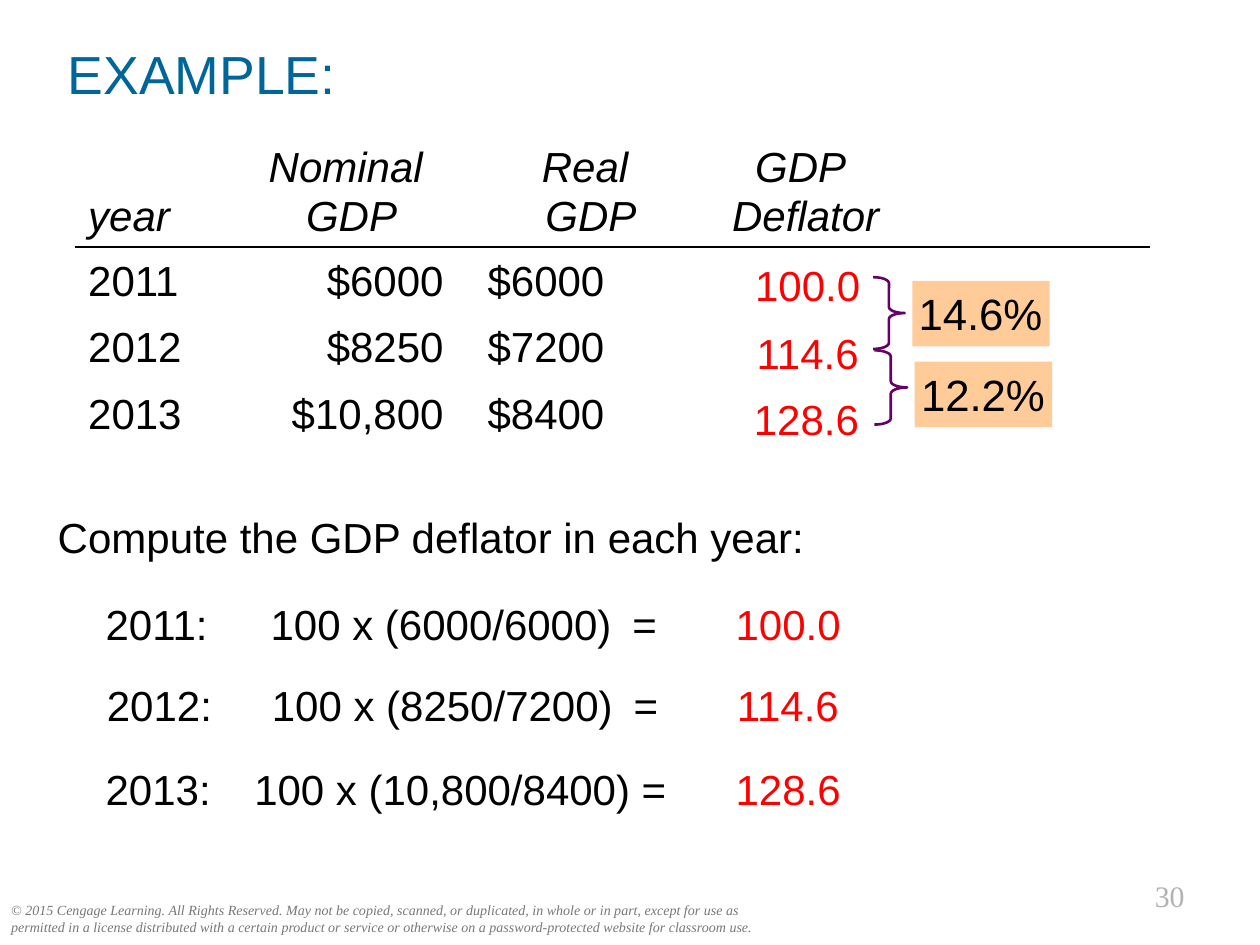
"""Build the GDP deflator example slide."""
from lxml.etree import SubElement
from pptx import Presentation
from pptx.dml.color import RGBColor
from pptx.enum.shapes import MSO_SHAPE as Shape
from pptx.enum.text import MSO_ANCHOR as Anchor, PP_ALIGN as Align
from pptx.oxml import parse_xml
from pptx.oxml.ns import nsdecls, qn
from pptx.util import Inches, Pt

COLORS = {
    "title": "006699", "text": "000000", "result": "FF0000", "growth": "FFCC99",
    "brace": "660066", "copyright": "777777", "number": "B2B2B2",
}


def style(paragraph, size=24, color="text", font="Arial", italic=False, align=Align.LEFT, spacing=1.05):
    paragraph.alignment = align
    paragraph.line_spacing = spacing
    paragraph.font.size = Pt(size)
    paragraph.font.name = font
    paragraph.font.italic = italic
    paragraph.font.color.rgb = RGBColor.from_string(COLORS[color])


def add_text(left, top, width, height, text, anchor=Anchor.TOP, tabs=(), **options):
    frame = slide.shapes.add_textbox(Inches(left), Inches(top), Inches(width), Inches(height)).text_frame
    frame.word_wrap = True
    frame.vertical_anchor = anchor
    paragraph = frame.paragraphs[0]
    paragraph.text = text
    if tabs:
        tab_list = SubElement(paragraph._p.get_or_add_pPr(), qn("a:tabLst"))
        for position in tabs:
            SubElement(tab_list, qn("a:tab"), pos=str(Inches(position)), algn="l")
    style(paragraph, **options)
    return paragraph


presentation = Presentation()
presentation.slide_width = Inches(10)
presentation.slide_height = Inches(7.5)
slide = presentation.slides.add_slide(presentation.slide_layouts[6])

add_text(
    -0.01, 7.11, 6.18, 0.37,
    "© 2015 Cengage Learning. All Rights Reserved. May not be copied, scanned, or duplicated, "
    "in whole or in part, except for use as permitted in a license distributed with a certain "
    "product or service or otherwise on a password-protected website for classroom use.",
    size=8, color="copyright", font="Times New Roman", italic=True, spacing=1,
)
add_text(8.25, 6.92, 1.25, 0.39, "30", size=17, color="number",
         font="Times New Roman", align=Align.RIGHT, spacing=1)
add_text(0.44, 0.27, 7.38, 0.62, "EXAMPLE:", anchor=Anchor.MIDDLE, size=30.6, color="title", spacing=1)
add_text(0.36, 3.99, 8.91, 0.59, "Compute the GDP deflator in each year:")

rows = [
    ["year", "Nominal \nGDP", "Real \nGDP", "GDP \nDeflator", ""],
    ["2011", "$6000", "$6000", "", ""],
    ["2012", "$8250", "$7200", "", ""],
    ["2013", "$10,800", "$8400", "", ""],
]
table = slide.shapes.add_table(4, 5, Inches(0.6), Inches(1.02), Inches(8.52), Inches(2.47)).table
table.first_row = False
table.horz_banding = False
for column, width in zip(table.columns, [1.21, 1.96, 1.84, 1.57, 1.94]):
    column.width = Inches(width)
for row_index, values in enumerate(rows):
    header = row_index == 0
    table.rows[row_index].height = Inches(0.88 if header else 0.53)
    for column_index, value in enumerate(values):
        cell = table.cell(row_index, column_index)
        cell.fill.background()
        cell.vertical_anchor = Anchor.BOTTOM if header else Anchor.MIDDLE
        align = Align.LEFT
        if header and column_index > 0:
            align = Align.CENTER
        elif column_index == 1:
            align = Align.RIGHT
            cell.margin_right = Inches(0.25)
        paragraph = cell.text_frame.paragraphs[0]
        paragraph.text = value
        style(paragraph, italic=header, align=align)
        if row_index < 2:
            edge = "lnB" if header else "lnT"
            cell._tc.get_or_add_tcPr().insert(0, parse_xml(
                f'<a:{edge} {nsdecls("a")} w="{Pt(1)}"><a:solidFill>'
                f'<a:srgbClr val="{COLORS["text"]}"/></a:solidFill></a:{edge}>'))

calculations = [
    ("2011:\t100 x (6000/6000)\t=\t", "100.0", 0.74, 4.68, (1.31, 4.18, 5), 5.8, 2.01),
    ("2012:\t100 x (8250/7200)\t=\t", "114.6", 0.75, 5.32, (1.31, 4.18, 5), 5.8, 2.55),
    ("2013:\t100 x (10,800/8400) =\t", "128.6", 0.74, 5.99, (1.18, 5), 5.79, 3.07),
]
for formula, deflator, left, top, tabs, deflator_left, deflator_top in calculations:
    result = add_text(left, top, 6.86, 0.59, formula, tabs=tabs).add_run()
    result.text = deflator
    result.font.color.rgb = RGBColor.from_string(COLORS["result"])
    add_text(deflator_left, deflator_top, 1.22, 0.48, deflator,
             anchor=Anchor.MIDDLE, color="result", align=Align.CENTER)

growth_rates = [
    ("14.6%", 7.24, 2.23, (6.93, 2.2, 0.25, 0.57)),
    ("12.2%", 7.26, 2.87, (6.94, 2.78, 0.26, 0.59)),
]
for rate, left, top, brace_box in growth_rates:
    box = slide.shapes.add_shape(Shape.RECTANGLE, Inches(left), Inches(top), Inches(1.09), Inches(0.52))
    box.shadow.inherit = False
    box.fill.solid()
    box.fill.fore_color.rgb = RGBColor.from_string(COLORS["growth"])
    box.line.fill.background()
    frame = box.text_frame
    frame.word_wrap = False
    frame.vertical_anchor = Anchor.TOP
    frame.margin_left = frame.margin_right = Inches(0.05)
    frame.paragraphs[0].text = rate
    style(frame.paragraphs[0], size=25, spacing=1)

    brace = slide.shapes.add_shape(Shape.RIGHT_BRACE, *map(Inches, brace_box))
    brace.shadow.inherit = False
    brace.adjustments[0] = 0.19
    brace.fill.background()
    brace.line.color.rgb = RGBColor.from_string(COLORS["brace"])
    brace.line.width = Pt(1.5)

presentation.save("out.pptx")
